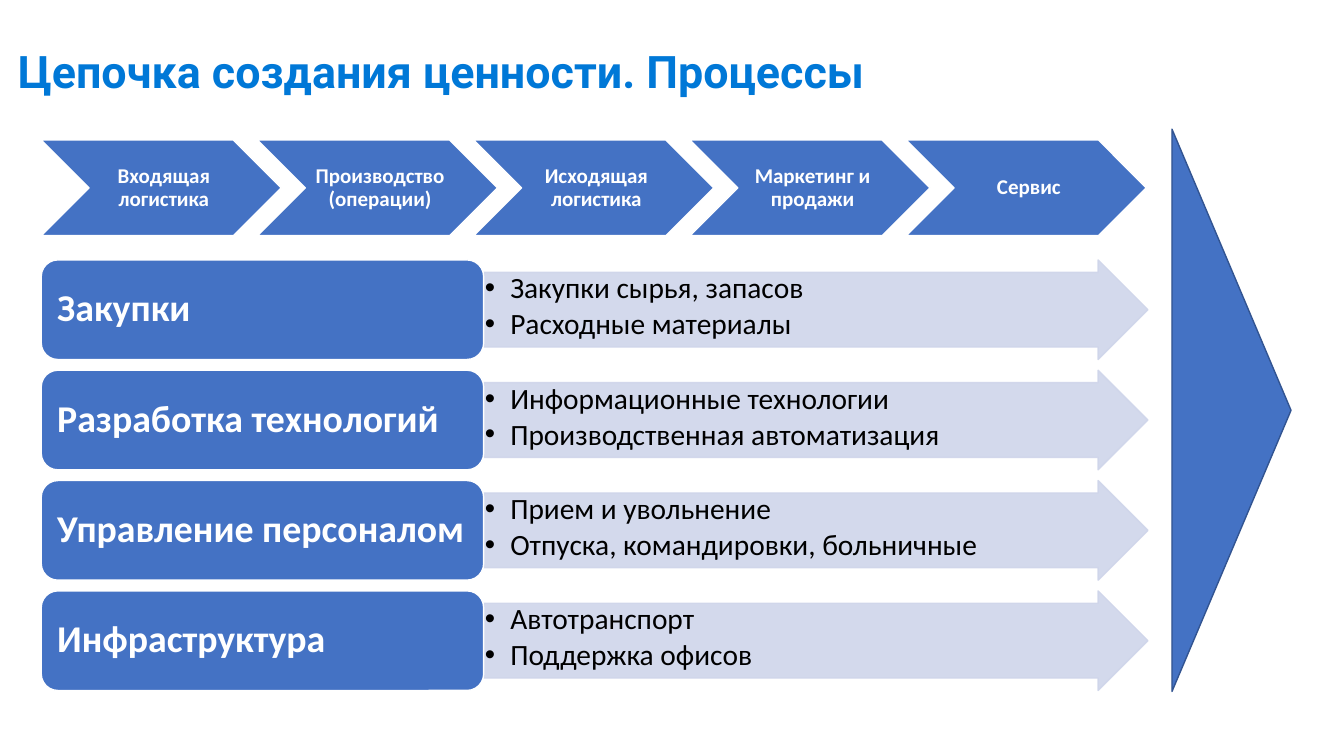
from lxml.etree import SubElement
from pptx import Presentation
from pptx.dml.color import RGBColor
from pptx.enum.shapes import MSO_SHAPE as Shape
from pptx.enum.text import MSO_ANCHOR as Anchor, MSO_AUTO_SIZE as AutoSize, PP_ALIGN as Align
from pptx.oxml.ns import qn
from pptx.util import Cm, Pt

# Content
TITLE = "Цепочка создания ценности. Процессы"
PRIMARY = ["Входящая логистика", "Производство (операции)", "Исходящая логистика",
           "Маркетинг и продажи", "Сервис"]
SUPPORT = [
    ("Закупки", ["Закупки сырья, запасов", "Расходные материалы"]),
    ("Разработка технологий", ["Информационные технологии", "Производственная автоматизация"]),
    ("Управление персоналом", ["Прием и увольнение", "Отпуска, командировки, больничные"]),
    ("Инфраструктура", ["Автотранспорт", "Поддержка офисов"]),
]

# Formats
COLORS = {"title": "0078D7", "blue": "4472C4", "edge": "325491",
          "pale": "CFD5EA", "white": "FFFFFF", "black": "000000"}
FONTS = {
    "title": {"name": "Roboto", "size": Pt(32), "bold": True},
    "step": {"name": "Calibri", "size": Pt(15), "bold": True},
    "area": {"name": "Calibri", "size": Pt(27), "bold": True},
    "item": {"name": "Calibri", "size": Pt(21), "bold": False},
}

# Layout in centimetres
LEFT = 1.04
STEP = {"top": 3.53, "width": 6.05, "height": 2.41, "pitch": 5.45}
ROW = {"top": 6.55, "height": 2.51, "pitch": 2.78}
AREA_WIDTH, ARROW_WIDTH = 11.15, 16.74


def color(name):
    return RGBColor.from_string(COLORS[name])


def add_box(page, kind, place, fill, line):
    box = page.shapes.add_shape(kind, *(Cm(value) for value in place))
    box.shadow.inherit = False
    box.fill.solid()
    box.fill.fore_color.rgb = color(fill)
    box.line.color.rgb = color(line)
    box.line.width = Pt(1)
    return box


def write(box, lines, style, ink, align, anchor, margins):
    frame = box.text_frame
    frame.word_wrap = True
    frame.auto_size = AutoSize.NONE
    frame.vertical_anchor = anchor
    for side, margin in zip(("left", "top", "right", "bottom"), margins):
        setattr(frame, f"margin_{side}", Cm(margin))
    for index, line in enumerate(lines):
        para = frame.add_paragraph() if index else frame.paragraphs[0]
        para.alignment = align
        para.line_spacing = 0.9
        span = para.add_run()
        span.text = line
        for key, value in FONTS[style].items():
            setattr(span.font, key, value)
        span.font.color.rgb = color(ink)
    return frame.paragraphs


def add_bullet(para):
    para.space_after = Pt(3)
    props = para._p.get_or_add_pPr()
    props.set("marL", str(Cm(0.64)))
    props.set("indent", str(-Cm(0.64)))
    SubElement(props, qn("a:buFont")).set("typeface", "Arial")
    SubElement(props, qn("a:buChar")).set("char", "•")


def make_translucent(box):
    for tone in box._element.spPr.iter(qn("a:srgbClr")):
        SubElement(tone, qn("a:alpha")).set("val", "90000")


def main():
    deck = Presentation()
    deck.slide_width, deck.slide_height = Cm(33.87), Cm(19.05)
    page = deck.slides.add_slide(deck.slide_layouts[5])

    # Title
    title = page.shapes.title
    title.left, title.top, title.width, title.height = Cm(0.2), Cm(0.2), Cm(33.48), Cm(3.35)
    write(title, [TITLE], "title", "title", Align.LEFT, Anchor.MIDDLE, (0.25, 0.13, 0.25, 0.13))

    # Primary activities
    for index, name in enumerate(PRIMARY):
        place = (LEFT + index * STEP["pitch"], STEP["top"], STEP["width"], STEP["height"])
        step = add_box(page, Shape.CHEVRON, place, "blue", "white")
        write(step, [name], "step", "white", Align.CENTER, Anchor.MIDDLE,
              (0.18, 0.05, 0.05, 0.05))

    # Support activities with their details
    for index, (name, items) in enumerate(SUPPORT):
        top = ROW["top"] + index * ROW["pitch"]
        arrow = add_box(page, Shape.RIGHT_ARROW,
                        (LEFT + AREA_WIDTH, top, ARROW_WIDTH, ROW["height"]), "pale", "pale")
        arrow.adjustments[0], arrow.adjustments[1] = 0.75, 0.5
        make_translucent(arrow)
        for para in write(arrow, items, "item", "black", Align.LEFT, Anchor.TOP, [0.03] * 4):
            add_bullet(para)
        area = add_box(page, Shape.ROUNDED_RECTANGLE,
                       (LEFT, top, AREA_WIDTH, ROW["height"]), "blue", "white")
        write(area, [name], "area", "white", Align.LEFT, Anchor.MIDDLE,
              (0.28, 0.15, 0.28, 0.15))

    # Closing triangle pointing right
    tip = add_box(page, Shape.ISOSCELES_TRIANGLE, (23.95, 8.84, 14.17, 3), "blue", "edge")
    tip.rotation = 90

    deck.save("out.pptx")


if __name__ == "__main__":
    main()
